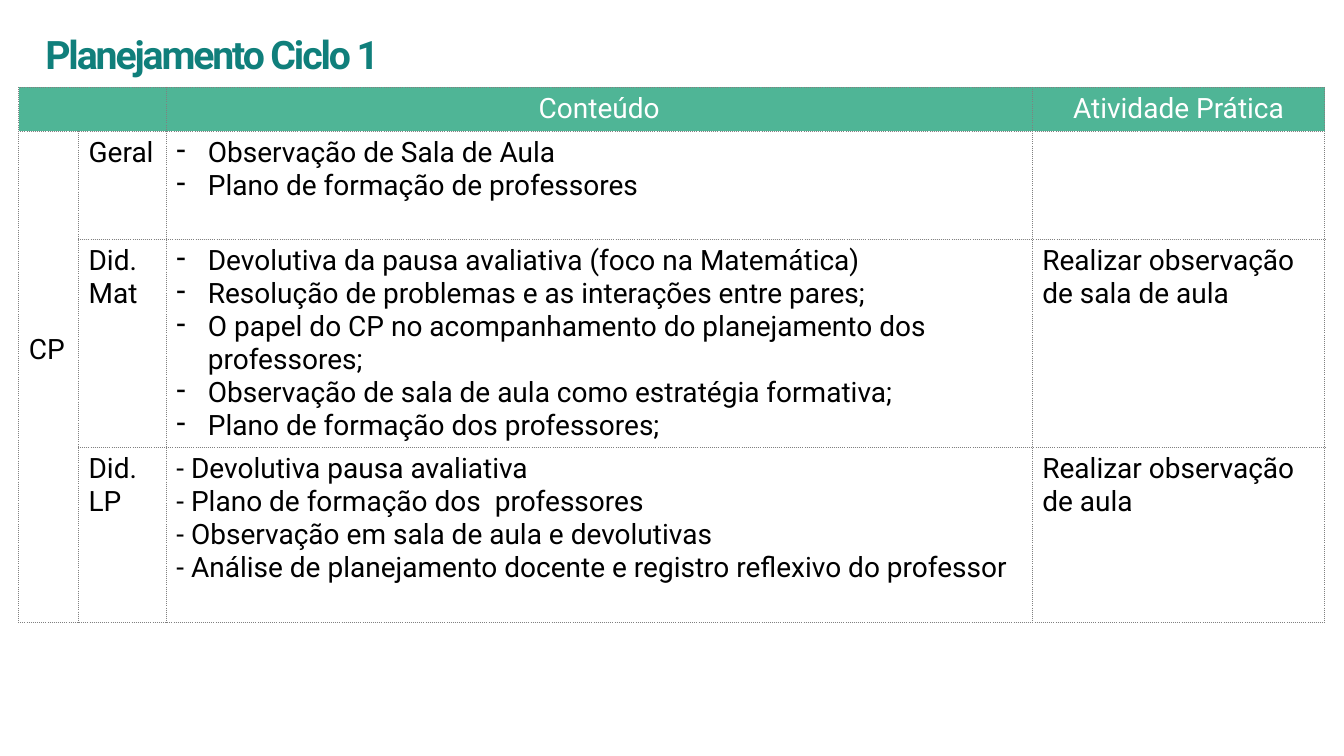
import pptx
import pptx.util
import pptx.dml.color
import pptx.enum.text
import pptx.oxml
import pptx.oxml.ns
from lxml import etree

Pt = pptx.util.Pt
RGBColor = pptx.dml.color.RGBColor
ALIGN = pptx.enum.text.PP_ALIGN
ANCHOR = pptx.enum.text.MSO_ANCHOR

TEAL = RGBColor(0x10, 0x7F, 0x7B)
GREEN = RGBColor(0x4F, 0xB5, 0x96)
GREY = RGBColor(0x80, 0x80, 0x80)
WHITE = RGBColor(0xFF, 0xFF, 0xFF)
BLACK = RGBColor(0, 0, 0)
FONT = "Roboto"

COLUMN_WIDTHS = [42.7, 62.7, 618.6, 209]
ROW_HEIGHTS = [31.4, 77.5, 148.2, 125]
HEADINGS = ["", "", "Conteúdo", "Atividade Prática"]

# Each row: subject, contents, whether the contents are bulleted, practice
SUBJECTS = [
    (["Geral"],
     ["Observação de Sala de Aula",
      "Plano de formação de professores"],
     True, []),
    (["Did. Mat"],
     ["Devolutiva da pausa avaliativa (foco na Matemática)",
      "Resolução de problemas e as interações entre pares;",
      "O papel do CP no acompanhamento do planejamento dos professores;",
      "Observação de sala de aula como estratégia formativa;",
      "Plano de formação dos professores;"],
     True, ["Realizar observação de sala de aula"]),
    (["Did.", "LP"],
     ["- Devolutiva pausa avaliativa",
      "- Plano de formação dos  professores",
      "- Observação em sala de aula e devolutivas",
      "- Análise de planejamento docente e registro reflexivo do professor"],
     False, ["Realizar observação de aula"]),
]


def add_run(paragraph, text, size, color, bold=False):
    run = paragraph.add_run()
    run.text = text
    run.font.name = FONT
    run.font.size = Pt(size)
    run.font.bold = bold
    run.font.color.rgb = color
    return run


def set_dash_bullet(paragraph):
    properties = paragraph._p.get_or_add_pPr()
    properties.set("marL", str(Pt(22.5)))
    properties.set("indent", str(-Pt(22.5)))
    bullet = etree.SubElement(properties, pptx.oxml.ns.qn("a:buChar"))
    bullet.set("char", "-")


def write_cell(cell, lines, color=BLACK, bulleted=False, align=ALIGN.LEFT):
    frame = cell.text_frame
    for index, line in enumerate(lines):
        paragraph = frame.add_paragraph() if index else frame.paragraphs[0]
        if bulleted:
            set_dash_bullet(paragraph)
        paragraph.alignment = align
        add_run(paragraph, line, 20, color)


def set_dotted_borders(cell):
    properties = cell._tc.get_or_add_tcPr()
    for side in ("lnL", "lnR", "lnT", "lnB"):
        properties.append(pptx.oxml.parse_xml(
            f'<a:{side} {pptx.oxml.ns.nsdecls("a")} w="{Pt(1)}">'
            f'<a:solidFill><a:srgbClr val="{GREY}"/></a:solidFill>'
            f'<a:prstDash val="sysDot"/></a:{side}>'))


def add_title(slide, text):
    title = slide.shapes.title
    title.left, title.top = Pt(25.2), Pt(18)
    title.width, title.height = Pt(880.6), Pt(90)
    frame = title.text_frame
    frame.word_wrap = True
    frame.auto_size = pptx.enum.text.MSO_AUTO_SIZE.NONE
    frame.vertical_anchor = ANCHOR.TOP
    paragraph = frame.paragraphs[0]
    paragraph.alignment = ALIGN.LEFT
    run = add_run(paragraph, text, 28, TEAL, bold=True)
    run.font._element.set("spc", "-150")


def add_plan_table(slide):
    plan = slide.shapes.add_table(
        len(ROW_HEIGHTS), len(COLUMN_WIDTHS), Pt(13.4), Pt(62.4),
        Pt(sum(COLUMN_WIDTHS)), Pt(sum(ROW_HEIGHTS))).table
    plan.first_row = False
    plan.horz_banding = False
    for column, width in zip(plan.columns, COLUMN_WIDTHS):
        column.width = Pt(width)
    for row, height in zip(plan.rows, ROW_HEIGHTS):
        row.height = Pt(height)

    # Borders and fills
    for row_index, row in enumerate(plan.rows):
        for cell in row.cells:
            set_dotted_borders(cell)
            if row_index == 0:
                cell.fill.solid()
                cell.fill.fore_color.rgb = GREEN
            else:
                cell.fill.background()
    return plan


def fill_plan(plan):
    # Heading row
    plan.cell(0, 0).merge(plan.cell(0, 1))
    for column, heading in enumerate(HEADINGS):
        if heading:
            write_cell(plan.cell(0, column), [heading], WHITE, align=ALIGN.CENTER)

    # Audience, set a little above the middle of its rows
    audience = plan.cell(1, 0)
    audience.merge(plan.cell(3, 0))
    audience.vertical_anchor = ANCHOR.MIDDLE
    audience.margin_bottom = Pt(42)
    write_cell(audience, ["CP"])

    # Subjects
    for row, (subject, contents, bulleted, practice) in enumerate(SUBJECTS, 1):
        write_cell(plan.cell(row, 1), subject)
        write_cell(plan.cell(row, 2), contents, bulleted=bulleted)
        write_cell(plan.cell(row, 3), practice)


def main():
    deck = pptx.Presentation()
    deck.slide_width, deck.slide_height = Pt(960), Pt(540)
    slide = deck.slides.add_slide(deck.slide_layouts[5])
    add_title(slide, "Planejamento Ciclo 1")
    fill_plan(add_plan_table(slide))
    deck.save("out.pptx")


if __name__ == "__main__":
    main()
